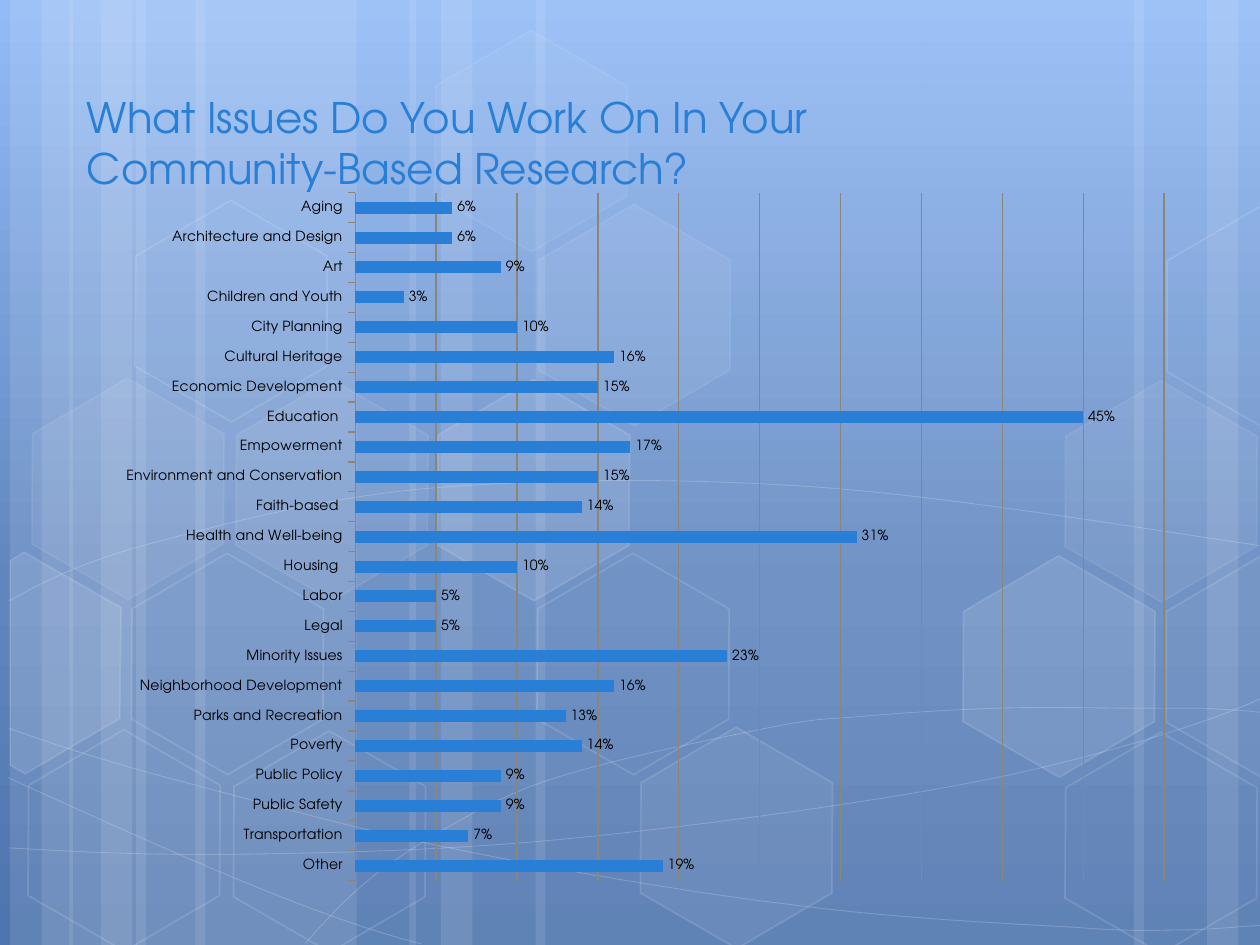
from copy import deepcopy
from math import cos, radians, sin
from pptx import Presentation
from pptx.chart.data import CategoryChartData
from pptx.dml.color import RGBColor
from pptx.enum.chart import XL_CHART_TYPE, XL_LABEL_POSITION, XL_TICK_MARK
from pptx.enum.shapes import MSO_SHAPE
from pptx.enum.text import MSO_ANCHOR, PP_ALIGN
from pptx.oxml import parse_xml
from pptx.oxml.ns import nsdecls, qn
from pptx.util import Inches, Pt

FONT = "TeX Gyre Adventor"
BLUE = RGBColor(0x29, 0x7F, 0xD5)
WHITE = RGBColor(0xFF, 0xFF, 0xFF)
BLACK = RGBColor(0, 0, 0)
GRID = RGBColor(0x8C, 0x86, 0x78)
SKY = [(0, RGBColor(0x93, 0xBB, 0xF6)), (0.62, RGBColor(0x61, 0x86, 0xBE)),
       (1, RGBColor(0x4F, 0x75, 0xAE))]

deck = Presentation()
deck.slide_width, deck.slide_height = Inches(10), Inches(7.5)
COL = deck.slide_width / 10
ROW = deck.slide_height / 7.5
slide = deck.slides.add_slide(deck.slide_layouts[5])
shapes = slide.shapes


def write(shape, text, size=24, color=BLUE, align=PP_ALIGN.LEFT, anchor=MSO_ANCHOR.BOTTOM):
    frame = shape.text_frame
    frame.word_wrap = True
    frame.vertical_anchor = anchor
    frame.text = text
    para = frame.paragraphs[0]
    para.alignment = align
    font = para.runs[0].font
    font.name, font.size, font.color.rgb = FONT, Pt(size), color


def glaze(shape, fill=0, line=0, width=1):
    shape.shadow.inherit = False
    for part, share in ((shape.fill, fill), (shape.line.fill, line)):
        if share:
            part.solid()
            part.fore_color.rgb = WHITE
        else:
            part.background()
    if line:
        shape.line.width = Pt(width)
    shares = [share for share in (fill, line) if share]
    for tone, share in zip(shape._element.spPr.iter(qn("a:srgbClr")), shares):
        tone.append(parse_xml(f'<a:alpha {nsdecls("a")} val="{share * 1000}"/>'))


back = slide.background.fill
back.gradient()
back.gradient_angle = 270
stops = slide.element.find(".//" + qn("a:gsLst"))
stops.append(deepcopy(stops[-1]))
for stop, (place, color) in zip(back.gradient_stops, SKY):
    stop.position = place
    stop.color.rgb = color

bands = [(1.08, 1.75), (0.08, 0.5), (0.33, 0.83), (1.55, 1.75), (0.55, 0.5), (0.8, 0.83),
         (7.33, 1.75), (9.58, 0.5), (9, 0.83), (4.25, 3.08), (3.25, 0.5), (3.5, 0.83)]
for left, wide in bands:
    band = shapes.add_shape(MSO_SHAPE.RECTANGLE, int(left * COL), 0,
                            int(wide * COL), deck.slide_height)
    glaze(band, fill=10)

waves = [
    [(0.07, 6.73), (0.61, 6.76), (1.15, 6.79), (1.9, 6.78), (2.65, 6.77), (3.58, 6.75),
     (4.58, 6.65), (5.58, 6.55), (7, 6.36), (7.92, 6.17), (8.83, 5.98), (9.77, 5.68),
     (10.07, 5.51)],
    [(0.07, 4.77), (0.36, 4.61), (0.65, 4.46), (1.21, 4.31), (1.78, 4.16), (2.59, 3.94),
     (3.47, 3.87), (4.36, 3.8), (5.44, 3.79), (6.54, 3.87), (7.64, 3.95), (9.47, 4.26),
     (10.07, 4.34)],
    [(0.06, 6.17), (1.27, 6.72), (2.47, 7.27), (3.34, 7.49)],
    [(0.07, 5.78), (0.38, 5.89), (0.7, 6), (1.28, 6.16), (1.86, 6.31), (2.73, 6.56),
     (3.57, 6.73), (4.4, 6.9), (5.45, 7.08), (6.28, 7.18), (7.11, 7.29), (8, 7.33),
     (8.53, 7.36), (9.05, 7.4), (9.19, 7.38), (9.45, 7.38), (9.71, 7.37), (9.89, 7.35),
     (10.07, 7.34)],
    [(2.42, 7.49), (2.6, 7.29), (2.78, 7.09), (3.02, 6.91), (3.26, 6.73), (3.6, 6.53),
     (3.88, 6.39), (4.16, 6.25), (4.33, 6.19), (4.7, 6.09), (5.06, 5.99), (5.73, 5.85),
     (6.08, 5.78), (6.44, 5.71), (6.49, 5.71), (6.8, 5.69), (7.11, 5.66), (7.6, 5.63),
     (7.94, 5.62), (8.29, 5.61), (8.86, 5.62), (8.86, 5.62), (8.86, 5.62), (9.53, 5.62),
     (9.53, 5.62), (9.71, 5.63), (9.88, 5.64), (9.97, 5.65), (10.06, 5.66), (10.03, 5.65),
     (10.06, 5.66)],
]
for wave in waves:
    dots = [(x * COL, y * ROW) for x, y in wave]
    pen = shapes.build_freeform(*dots[0])
    pen.add_line_segments(dots[3::3], close=False)
    curve = pen.convert_to_shape()
    track = curve._element.find(".//" + qn("a:path"))
    for turn, old in enumerate(track.findall(qn("a:lnTo"))):
        bend = "".join(f'<a:pt x="{int(x - curve.left)}" y="{int(y - curve.top)}"/>'
                       for x, y in dots[3 * turn + 1:3 * turn + 4])
        track.replace(old, parse_xml(f'<a:cubicBezTo {nsdecls("a")}>{bend}</a:cubicBezTo>'))
    glaze(curve, line=20, width=0.5)

cells = [
    (3.36, 3.13, 10, 12), (4.15, 4.51, 0, 12), (4.16, 1.74, 7, 8), (3.34, 0.36, 4, 8),
    (4.97, 5.89, 6, 12), (0.11, 5.91, 0, 12), (0.14, 3.12, 7, 8), (0.93, 4.51, 0, 12),
    (1.74, 5.92, 0, 12), (1.76, 3.13, 7, 8), (0.96, 1.71, 0, 12), (7.53, 4.53, 10, 12),
    (8.34, 5.93, 0, 12), (8.34, 3.14, 7, 8),
]
for left, top, fill, line in cells:
    cell = shapes.add_shape(MSO_SHAPE.HEXAGON, int(left * COL), int(top * ROW),
                            int(1.75 * COL), int(1.52 * ROW))
    cell.adjustments[0] = 0.285
    cell.rotation = 30
    glaze(cell, fill, line)

TURN = 30
cosine, sine = cos(radians(TURN)), sin(radians(TURN))
edge = [(9.26, 2.07), (10.01, 1.63), (10.1, 1.68), (10.09, 3.35), (10.02, 3.39), (9.26, 2.95)]
parts = [
    ([(0.08, 4.45), (0.19, 4.38), (0.96, 4.82), (0.95, 5.7), (0.2, 6.14), (0.08, 6.07)],
     (0.36, 5.35), 10),
    ([(x, y + 2.78) for x, y in edge], (9.85, 5.2), 4),
    (edge, (9.85, 2.41), 0),
]
for dots, (midx, midy), fill in parts:
    flat = [((midx + (x - midx) * cosine + (y - midy) * sine) * COL,
             (midy - (x - midx) * sine + (y - midy) * cosine) * ROW) for x, y in dots]
    pen = shapes.build_freeform(*flat[0])
    pen.add_line_segments(flat[1:])
    piece = pen.convert_to_shape()
    piece.rotation = TURN
    glaze(piece, fill, 12)

title = shapes.title
title.left, title.top = int(0.59 * COL), int(0.25 * ROW)
title.width, title.height = int(7.93 * COL), int(1.33 * ROW)
write(title, "What Issues Do You Work On In Your Community-Based Research?")
shapes._spTree.append(title._element)

issues = [
    ("Other", 0.19), ("Transportation", 0.07), ("Public Safety", 0.09),
    ("Public Policy", 0.09), ("Poverty", 0.14), ("Parks and Recreation", 0.13),
    ("Neighborhood Development", 0.16), ("Minority Issues", 0.23), ("Legal", 0.05),
    ("Labor", 0.05), ("Housing ", 0.1), ("Health and Well-being", 0.31),
    ("Faith-based ", 0.14), ("Environment and Conservation", 0.15), ("Empowerment", 0.17),
    ("Education ", 0.45), ("Economic Development", 0.15), ("Cultural Heritage", 0.16),
    ("City Planning", 0.1), ("Children and Youth", 0.03), ("Art", 0.09),
    ("Architecture and Design", 0.06), ("Aging", 0.06),
]
data = CategoryChartData(number_format="0%")
data.categories = [name for name, share in issues]
data.add_series("Series 1", [share for name, share in issues])
LEFT, TOP, WIDE, HIGH = 0.83, 1.42, 8.58, 5.69
chart = shapes.add_chart(XL_CHART_TYPE.BAR_CLUSTERED, int(LEFT * COL), int(TOP * ROW),
                         int(WIDE * COL), int(HIGH * ROW), data).chart
chart.has_legend = chart.has_title = False
chart.font.name, chart.font.size, chart.font.color.rgb = FONT, Pt(8), BLACK

names, scale = chart.category_axis, chart.value_axis
names.major_tick_mark = XL_TICK_MARK.OUTSIDE
names.has_major_gridlines = False
scale.visible = False
scale.has_major_gridlines = True
scale.minimum_scale, scale.maximum_scale, scale.major_unit = 0, 0.5, 0.05
for line in (names.format.line, scale.major_gridlines.format.line):
    line.color.rgb = GRID
    line.width = Pt(0.75)

plot = chart.plots[0]
plot.gap_width = 150
plot.vary_by_categories = False
bars = plot.series[0].format.fill
bars.solid()
bars.fore_color.rgb = BLUE
plot.has_data_labels = True
tags = plot.data_labels
tags.show_value = True
tags.number_format, tags.number_format_is_linked = "0%", False
tags.position = XL_LABEL_POSITION.OUTSIDE_END

area = chart._chartSpace.find(".//" + qn("c:plotArea"))
for old in area.findall(qn("c:layout")):
    area.remove(old)
box = "".join(f'<c:{key} val="{share}"/>' for key, share in
              (("x", (2.82 - LEFT) / WIDE), ("y", (1.53 - TOP) / HIGH),
               ("w", 6.42 / WIDE), ("h", 5.46 / HIGH)))
area.insert(0, parse_xml(
    f'<c:layout {nsdecls("c")}><c:manualLayout><c:layoutTarget val="inner"/>'
    f'<c:xMode val="edge"/><c:yMode val="edge"/>{box}</c:manualLayout></c:layout>'))

deck.save("out.pptx")
